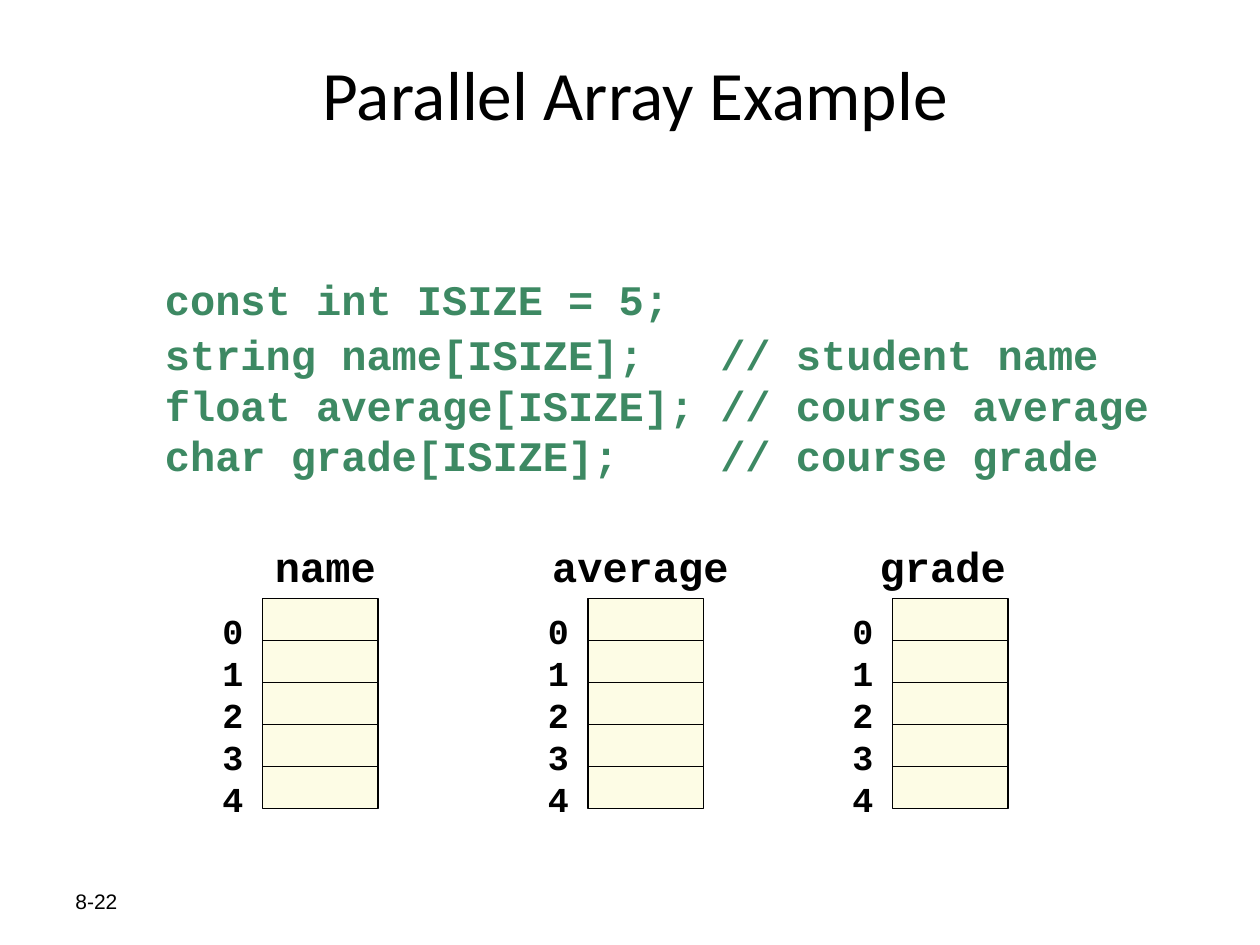
"""Build a slide that shows three parallel arrays and their declarations."""
from lxml.etree import SubElement
from pptx import Presentation
from pptx.dml.color import RGBColor
from pptx.enum.shapes import MSO_SHAPE as Shape
from pptx.enum.text import MSO_ANCHOR as Anchor, PP_ALIGN as Align
from pptx.oxml.ns import qn
from pptx.util import Pt

EMU_PER_PX = 7620
COLORS = {"text": "000000", "code": "3D8963", "cell": "FDFCE5"}
MONO = "Courier New"
CELL_WIDTH, CELL_HEIGHT, CELL_COUNT = 110, 40, 5
ARRAY_TOP = 570
ARRAY_LEFTS = (250, 560, 850)
DECLARATIONS = (
    "const int ISIZE = 5;",
    "string name[ISIZE];\t// student name",
    "float average[ISIZE];\t// course average",
    "char grade[ISIZE];\t// course grade",
)


def px(length):
    return length * EMU_PER_PX


def color(name):
    return RGBColor.from_string(COLORS[name])


def add_text(shapes, box, lines, size, font="Arial", fill="text", bold=False,
             margins=(12, 6), line_points=None, align=Align.LEFT, anchor=Anchor.TOP):
    text_box = shapes.add_textbox(*map(px, box))
    frame = text_box.text_frame
    frame.word_wrap = True
    frame.vertical_anchor = anchor
    frame.margin_left, frame.margin_top = map(px, margins)
    frame.margin_right = 0 if align == Align.LEFT else px(margins[0])
    frame.text = "\n".join(lines)
    for paragraph in frame.paragraphs:
        paragraph.alignment = align
        if line_points:
            paragraph.line_spacing = Pt(line_points)
        for run in paragraph.runs:
            run.font.name = font
            run.font.size = Pt(size)
            run.font.bold = bold
            run.font.color.rgb = color(fill)
    return frame


def set_tabs(frame, positions):
    for paragraph in frame.paragraphs:
        tab_list = SubElement(paragraph._p.get_or_add_pPr(), qn("a:tabLst"))
        for position in positions:
            SubElement(tab_list, qn("a:tab"), pos=str(px(position)), algn="l")


def add_cell(shapes, left, top):
    cell = shapes.add_shape(
        Shape.RECTANGLE, px(left), px(top), px(CELL_WIDTH), px(CELL_HEIGHT))
    cell.shadow.inherit = False
    cell.fill.solid()
    cell.fill.fore_color.rgb = color("cell")
    cell.line.color.rgb = color("text")
    cell.line.width = Pt(0.75)


def add_array(slide, left):
    shapes = slide.shapes.add_group_shape().shapes
    for index in range(CELL_COUNT):
        add_cell(shapes, left, ARRAY_TOP + index * CELL_HEIGHT)
    add_text(shapes, (left - 50, ARRAY_TOP, 40, 212), map(str, range(CELL_COUNT)),
             20, MONO, bold=True, margins=(12, 10), line_points=24)


def add_declarations(slide):
    frame = add_text(slide.shapes, (100, 230, 1020, 560), DECLARATIONS, 24, MONO,
                     "code", True, margins=(57, 30), line_points=29)
    frame.paragraphs[0].space_after = Pt(2.5)
    set_tabs(frame, (529,))


def add_array_names(slide):
    frame = add_text(slide.shapes, (250, 500, 750, 60), ["name\taverage\tgrade"],
                     24, MONO, bold=True, margins=(12, 15))
    set_tabs(frame, (264, 576))


def main():
    presentation = Presentation()
    presentation.slide_width, presentation.slide_height = px(1200), px(900)
    slide = presentation.slides.add_slide(presentation.slide_layouts[6])
    add_text(slide.shapes, (40, 40, 1130, 96), ["Parallel Array Example"], 39.6,
             "Calibri", align=Align.CENTER, anchor=Anchor.MIDDLE)
    add_declarations(slide)
    add_text(slide.shapes, (60, 834, 280, 48), ["8-22"], 12, anchor=Anchor.MIDDLE)
    for left in ARRAY_LEFTS:
        add_array(slide, left)
    add_array_names(slide)
    presentation.save("out.pptx")


if __name__ == "__main__":
    main()
